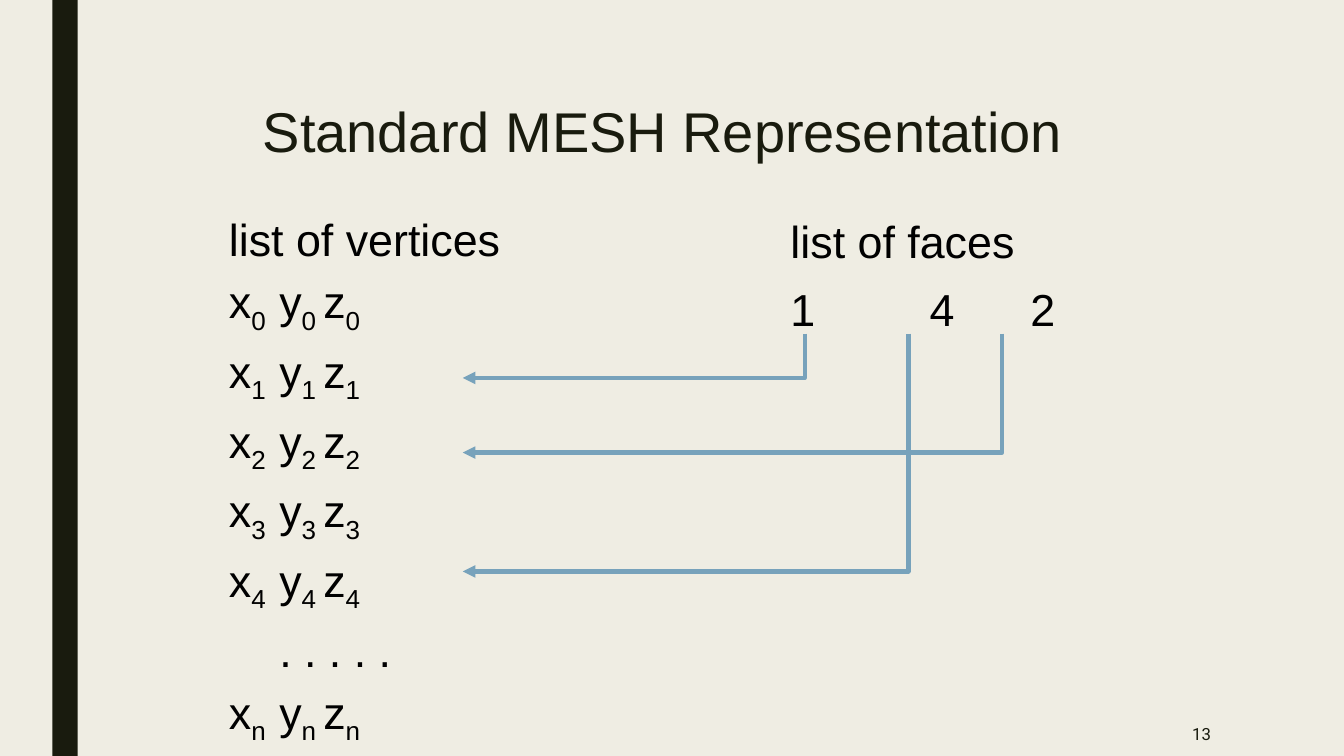
from lxml import etree
from pptx import Presentation
from pptx.dml.color import RGBColor
from pptx.enum.shapes import MSO_SHAPE
from pptx.enum.text import MSO_ANCHOR, MSO_AUTO_SIZE, PP_ALIGN
from pptx.oxml.ns import qn
from pptx.util import Inches, Pt

RECTANGLE = MSO_SHAPE.RECTANGLE
MIDDLE = MSO_ANCHOR.MIDDLE
NO_FIT = MSO_AUTO_SIZE.NONE
CENTER = PP_ALIGN.CENTER
RIGHT = PP_ALIGN.RIGHT

CREAM = RGBColor(0xEF, 0xED, 0xE3)
DARK = RGBColor(0x19, 0x1B, 0x0E)
BLACK = RGBColor(0, 0, 0)
BLUE = RGBColor(0x77, 0xA2, 0xBB)


def write(para, text, size=32, font="Arial", color=BLACK, baseline=0):
    span = para.add_run()
    span.text = text
    span.font.size = Pt(size)
    span.font.name = font
    span.font.color.rgb = color
    if baseline:
        span.font._element.set("baseline", str(baseline * 1000))


def place(box, left, top, width, height):
    box.left, box.top = Inches(left), Inches(top)
    box.width, box.height = Inches(width), Inches(height)


deck = Presentation()
deck.slide_width = Inches(13.33)
deck.slide_height = Inches(7.5)
page = deck.slides.add_slide(deck.slide_layouts[3])
page.background.fill.solid()
page.background.fill.fore_color.rgb = CREAM
title, vertices, faces = page.placeholders

bar = page.shapes.add_shape(RECTANGLE, Inches(0.52), 0, Inches(0.25), Inches(7.5))
bar.shadow.inherit = False
bar.fill.solid()
bar.fill.fore_color.rgb = DARK
bar.line.fill.background()

place(title, 1.75, 0.67, 9.64, 1.25)
title.text_frame.auto_size = NO_FIT
title.text_frame.vertical_anchor = MIDDLE
title.text_frame.paragraphs[0].alignment = CENTER
write(title.text_frame.paragraphs[0], "Standard MESH Representation", size=40, color=DARK)

place(vertices, 2.17, 2, 4.65, 5.32)
place(faces, 7.74, 2.02, 4.65, 1.73)

vertex_rows = [
    [("x", 0), (name, -25), ("\ty", 0), (name + " ", -25), ("z", 0), (name, -25)]
    for name in "01234n"
]
vertex_rows.insert(0, [("list of vertices", 0)])
vertex_rows.insert(-1, [("\t. . . . .", 0)])
face_rows = [[("list of faces", 0)], [("1\t\t\t4\t\t2", 0)]]

for box, rows, hanging, spacing in (
    (vertices, vertex_rows, 0.5, 1.0),
    (faces, face_rows, 0.38, 1.1),
):
    frame = box.text_frame
    frame.auto_size = NO_FIT
    for number, row in enumerate(rows):
        para = frame.add_paragraph() if number else frame.paragraphs[0]
        properties = para._p.get_or_add_pPr()
        properties.set("marL", str(Inches(hanging)))
        properties.set("indent", str(-Inches(hanging)))
        etree.SubElement(properties, qn("a:buNone"))
        para.line_spacing = spacing if number else 1.1
        para.space_before = Pt(6 if number else 0)
        for text, baseline in row:
            write(para, text, baseline=baseline)

for start, level in ((7.98, 3.75), (9.01, 5.67), (9.94, 4.49)):
    builder = page.shapes.build_freeform(Inches(start), Inches(3.31))
    builder.add_line_segments(
        [(Inches(start), Inches(level)), (Inches(4.59), Inches(level))], close=False
    )
    arrow = builder.convert_to_shape()
    arrow.shadow.inherit = False
    arrow.fill.background()
    arrow.line.color.rgb = BLUE
    arrow.line.width = Pt(3)
    etree.SubElement(arrow.line._get_or_add_ln(), qn("a:tailEnd"), type="triangle")

page_number = page.shapes.add_textbox(0, 0, 0, 0)
place(page_number, 10.36, 7.06, 1.75, 0.44)
page_number.text_frame.word_wrap = True
page_number.text_frame.vertical_anchor = MIDDLE
page_number.text_frame.paragraphs[0].alignment = RIGHT
write(page_number.text_frame.paragraphs[0], "13", size=12, font="Roboto", color=DARK)

deck.save("out.pptx")
